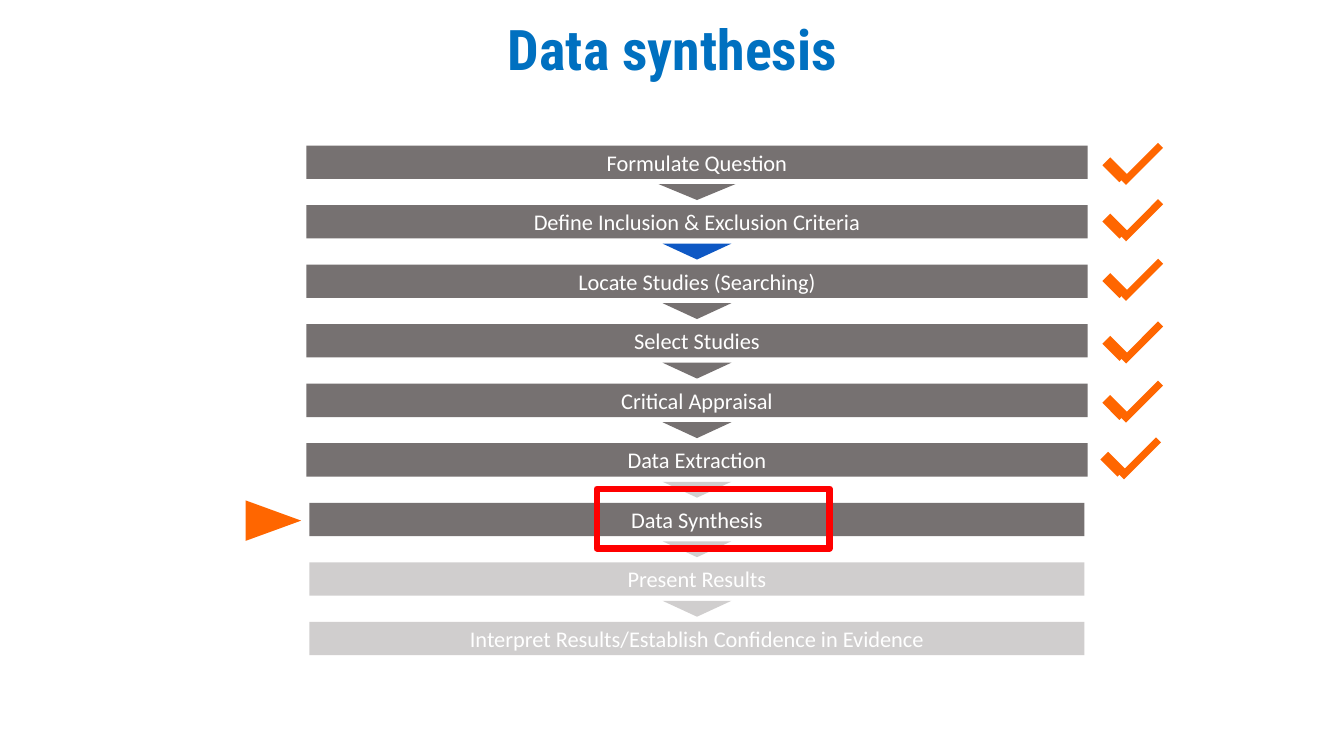
from pptx import Presentation
from pptx.dml.color import RGBColor
from pptx.enum.shapes import MSO_SHAPE
from pptx.enum.text import MSO_ANCHOR, PP_ALIGN
from pptx.util import Cm, Pt

GREY = RGBColor(0x76, 0x71, 0x71)
PALE = RGBColor(0xD0, 0xCE, 0xCE)
BLUE = RGBColor(0x0E, 0x58, 0xC4)
TITLE_BLUE = RGBColor(0x00, 0x70, 0xC0)
ORANGE = RGBColor(0xFF, 0x66, 0x00)
RED = RGBColor(0xFF, 0x00, 0x00)
WHITE = RGBColor(0xFF, 0xFF, 0xFF)

# Step, bar colour, colour of the arrow below it
STEPS = [
    ("Formulate Question", GREY, GREY),
    ("Define Inclusion & Exclusion Criteria", GREY, BLUE),
    ("Locate Studies (Searching)", GREY, GREY),
    ("Select Studies", GREY, GREY),
    ("Critical Appraisal", GREY, GREY),
    ("Data Extraction", GREY, PALE),
    ("Data Synthesis", GREY, PALE),
    ("Present Results", PALE, PALE),
    ("Interpret Results/Establish Confidence in Evidence", PALE, None),
]
CURRENT = 6
PITCH, BAR_H = 1.5, 0.84
# Left and top of the tick beside each finished step, in cm
TICKS = [(27.79, 4.14), (27.79, 5.56), (27.79, 7.06),
         (27.79, 8.64), (27.79, 10.13), (27.74, 11.56)]


def add_block(s, kind, x, y, w, h, fill=None, rotation=0):
    sp = s.shapes.add_shape(kind, Cm(x), Cm(y), Cm(w), Cm(h))
    sp.shadow.inherit = False
    sp.rotation = rotation
    sp.line.fill.background()
    if fill is None:
        sp.fill.background()
    else:
        sp.fill.solid()
        sp.fill.fore_color.rgb = fill
    return sp


def write(sp, text, font, size, color, bold=False):
    tf = sp.text_frame
    tf.word_wrap = True
    tf.vertical_anchor = MSO_ANCHOR.MIDDLE
    tf.text = text
    p = tf.paragraphs[0]
    p.alignment = PP_ALIGN.CENTER
    r = p.runs[0]
    r.font.name, r.font.size, r.font.bold = font, Pt(size), bold
    r.font.color.rgb = color


def add_title(s, x, y, w, h):
    sp = s.shapes.add_textbox(Cm(x), Cm(y), Cm(w), Cm(h))
    write(sp, "Data synthesis", "Roboto Condensed", 40, TITLE_BLUE, True)
    sp.text_frame.paragraphs[0].line_spacing = 0.9


def add_steps(s, x, y, w):
    for i, (label, fill, arrow) in enumerate(STEPS):
        top = y + i * PITCH
        inset = 0.08 if i >= CURRENT else 0
        bar = add_block(s, MSO_SHAPE.RECTANGLE, x + inset, top,
                        w - 2 * inset, BAR_H, fill)
        write(bar, label, "Calibri", 16, WHITE)
        if arrow is not None:
            arrow_w = 1.93 if i == 0 else 1.73
            add_block(s, MSO_SHAPE.ISOSCELES_TRIANGLE, x + (w - arrow_w) / 2,
                      top + 0.97, arrow_w, 0.4, arrow, 180)


def add_tick(s, x, y):
    add_block(s, MSO_SHAPE.RECTANGLE, x, y, 0.61, 0.28, ORANGE, 45)
    add_block(s, MSO_SHAPE.RECTANGLE, x + 0.33, y - 0.1, 1.32, 0.18, ORANGE, 135)


def add_current_marker(s, x, y):
    # Pointer left of the bar, frame around its label
    add_block(s, MSO_SHAPE.ISOSCELES_TRIANGLE, x - 1.34, y - 0.25,
              1.02, 1.4, ORANGE, 90)
    frame = add_block(s, MSO_SHAPE.RECTANGLE, x + 7.32, y - 0.35, 5.87, 1.5)
    frame.line.color.rgb = RED
    frame.line.width = Pt(4.5)


def main():
    prs = Presentation()
    prs.slide_width, prs.slide_height = Cm(33.87), Cm(19.05)
    s = prs.slides.add_slide(prs.slide_layouts[6])
    left, top = 7.72, 3.67
    add_title(s, 2.34, 0.38, 29.21, 1.88)
    add_steps(s, left, top, 19.69)
    for x, y in TICKS:
        add_tick(s, x, y)
    add_current_marker(s, left, top + CURRENT * PITCH)
    prs.save("out.pptx")


if __name__ == "__main__":
    main()
